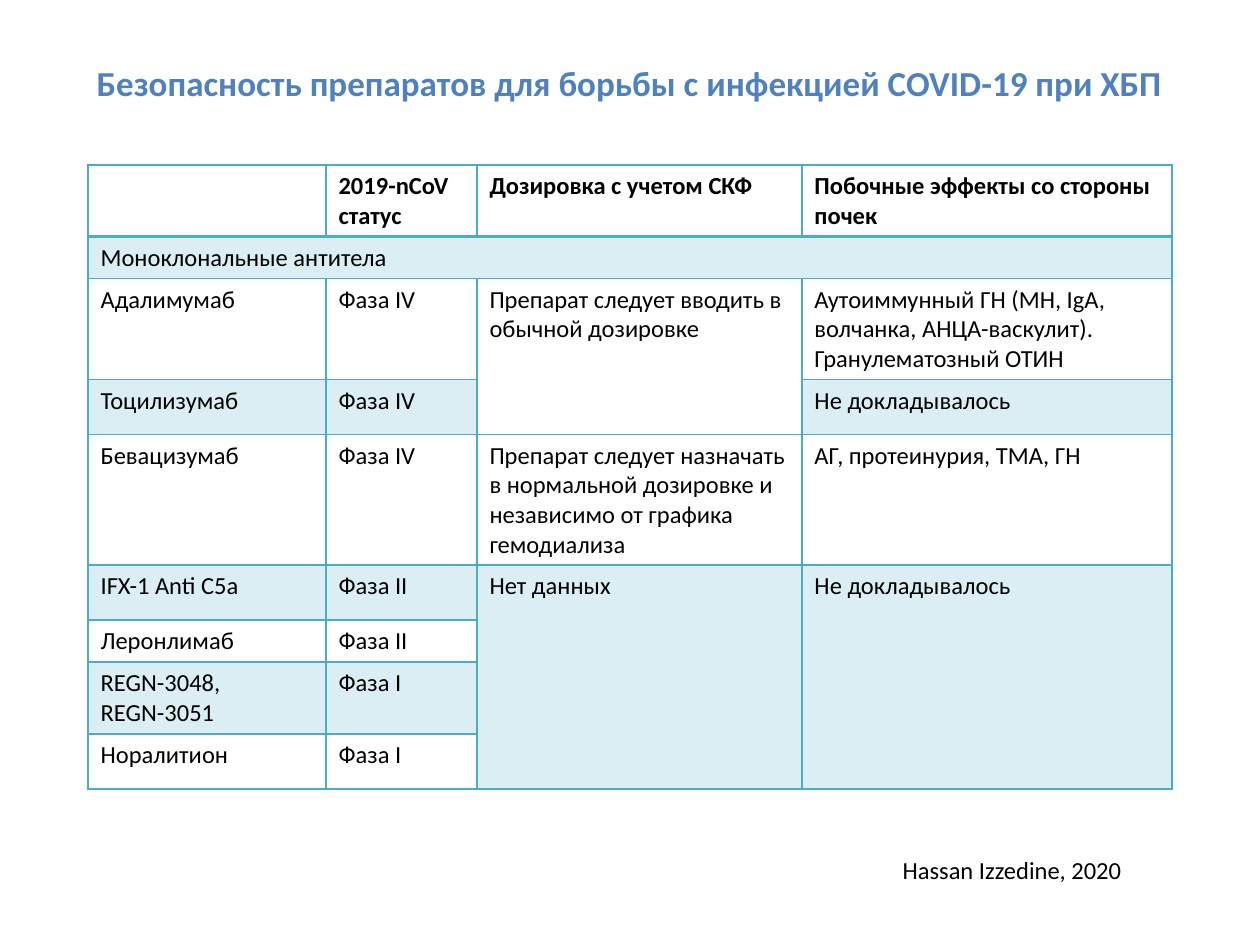
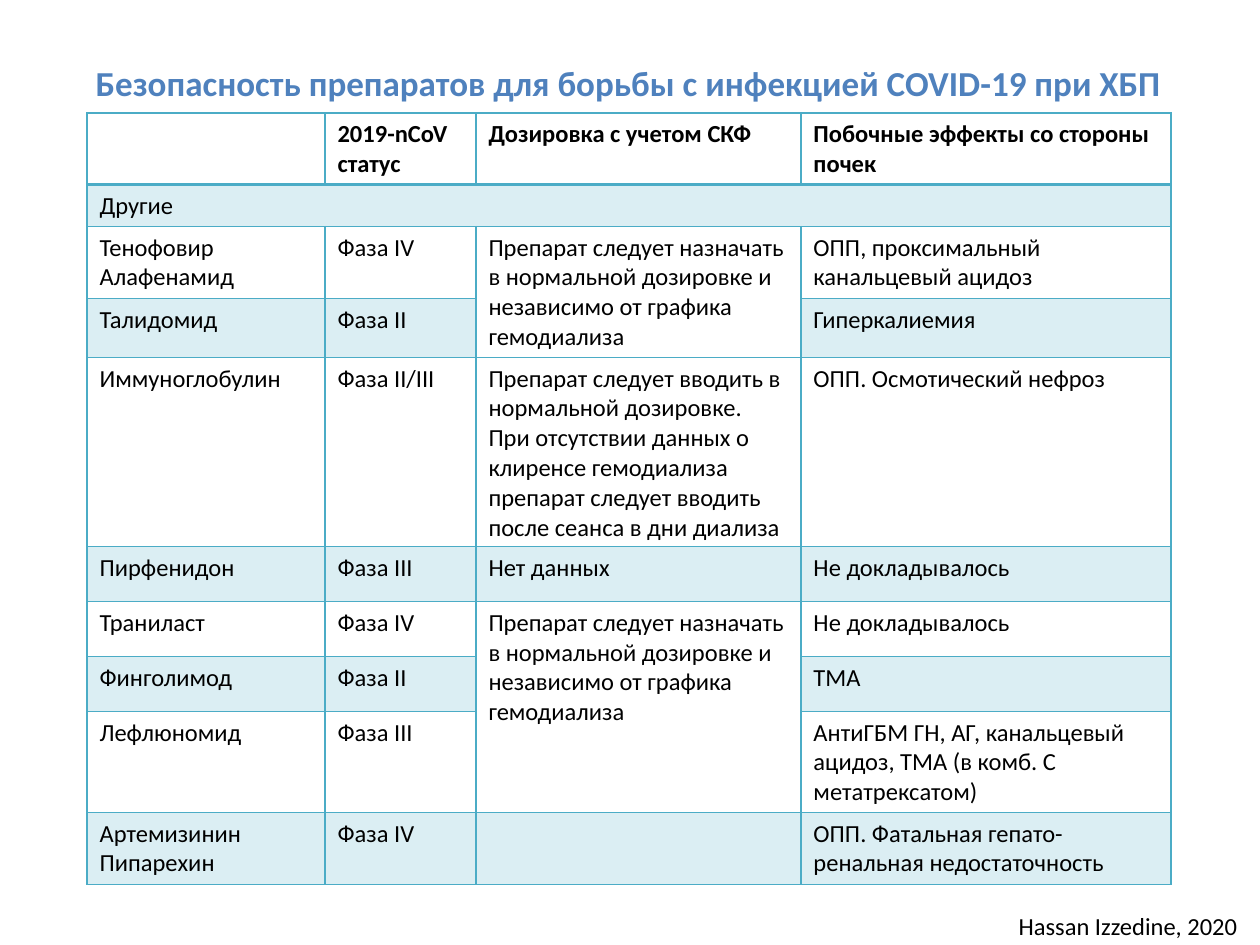
from lxml import etree
from pptx import Presentation
from pptx import util as u
from pptx.dml.color import RGBColor
from pptx.enum import text
from pptx.oxml.ns import qn

PX = 914400 / 126  # EMU in one px
COLORS = {"title": "4F81BD", "body": "000000", "accent": "4BACC6"}
FONT = "Calibri"
TINT_ALPHA = "20000"

TITLE = "Безопасность препаратов для борьбы с инфекцией COVID-19 при ХБП"
AUTHOR = "Hassan Izzedine, 2020"
HEADER = ["", "2019-nCoV статус", "Дозировка с учетом СКФ", "Побочные эффекты со стороны почек"]
COLUMN_WIDTHS = [238, 151, 325, 370]
USUAL_DOSE = "Препарат следует назначать в нормальной дозировке и независимо от графика гемодиализа"
NO_DATA = "Нет данных"
NOT_REPORTED = "Не докладывалось"

# Each drug row: name, status, dosage, side effects; None continues the cell above
PAGES = [
    {
        "title_left": 74, "table": (88, 165), "author": (878, 849),
        "section": "Моноклональные антитела",
        "heights": [71, 42, 101, 55, 130, 55, 42, 72, 55],
        "drugs": [
            ["Адалимумаб", "Фаза IV", "Препарат следует вводить в обычной дозировке",
             "Аутоиммунный ГН (МН, IgA, волчанка, АНЦА-васкулит). Гранулематозный ОТИН"],
            ["Тоцилизумаб", "Фаза IV", None, NOT_REPORTED],
            ["Бевацизумаб", "Фаза IV", USUAL_DOSE, "АГ, протеинурия, ТМА, ГН"],
            ["IFX-1 Anti C5a", "Фаза II", NO_DATA, NOT_REPORTED],
            ["Леронлимаб", "Фаза II", None, None],
            ["REGN-3048, REGN-3051", "Фаза I", None, None],
            ["Норалитион", "Фаза I", None, None],
        ],
    },
    {
        "title_left": 73, "table": (87, 113), "author": (994, 905),
        "section": "Другие",
        "heights": [71, 42, 72, 59, 189, 55, 55, 55, 100, 72],
        "drugs": [
            ["Тенофовир Алафенамид", "Фаза IV", USUAL_DOSE, "ОПП, проксимальный канальцевый ацидоз"],
            ["Талидомид", "Фаза II", None, "Гиперкалиемия"],
            ["Иммуноглобулин", "Фаза II/III",
             "Препарат следует вводить в нормальной дозировке. При отсутствии данных о клиренсе "
             "гемодиализа препарат следует вводить после сеанса в дни диализа",
             "ОПП. Осмотический нефроз"],
            ["Пирфенидон", "Фаза III", NO_DATA, NOT_REPORTED],
            ["Траниласт", "Фаза IV", USUAL_DOSE, NOT_REPORTED],
            ["Финголимод", "Фаза II", None, "ТМА"],
            ["Лефлюномид", "Фаза III", None,
             "АнтиГБМ ГН, АГ, канальцевый ацидоз, ТМА (в комб. С метатрексатом)"],
            ["Артемизинин Пипарехин", "Фаза IV", "", "ОПП. Фатальная гепато-ренальная недостаточность"],
        ],
    },
]


def add_run(paragraph, words, size, color, bold=False):
    run = paragraph.add_run()
    run.text = words
    run.font.name = FONT
    run.font.size = u.Pt(size)
    run.font.bold = bold
    run.font.color.rgb = RGBColor.from_string(COLORS[color])


def add_border(cell, side, points):
    line = etree.SubElement(cell._tc.get_or_add_tcPr(), qn("a:ln" + side), w=str(u.Pt(points)))
    fill = etree.SubElement(line, qn("a:solidFill"))
    etree.SubElement(fill, qn("a:srgbClr"), val=COLORS["accent"])


presentation = Presentation()
presentation.slide_width = round(1260 * PX)
presentation.slide_height = round(945 * PX)

for page in PAGES:
    slide = presentation.slides.add_slide(presentation.slide_layouts[6])

    # Title and author, both centred in their boxes
    author_left, author_top = page["author"]
    for box, words, size, color, bold in [
        ((page["title_left"], 55, 1111, 55), TITLE, 20, "title", True),
        ((author_left, author_top, 268, 43), AUTHOR, 14, "body", False),
    ]:
        shape = slide.shapes.add_textbox(*[round(length * PX) for length in box])
        shape.text_frame.word_wrap = True
        shape.text_frame.auto_size = text.MSO_AUTO_SIZE.SHAPE_TO_FIT_TEXT
        paragraph = shape.text_frame.paragraphs[0]
        paragraph.alignment = text.PP_ALIGN.CENTER
        add_run(paragraph, words, size, color, bold)

    # Table grid
    rows = [HEADER, [page["section"], None, None, None]] + page["drugs"]
    left, top = page["table"]
    frame = slide.shapes.add_table(
        len(rows), len(HEADER), round(left * PX), round(top * PX),
        round(sum(COLUMN_WIDTHS) * PX), round(sum(page["heights"]) * PX))
    table = frame.table
    table.first_row = False
    table.horz_banding = False
    for column, width in zip(table.columns, COLUMN_WIDTHS):
        column.width = round(width * PX)
    for row, height in zip(table.rows, page["heights"]):
        row.height = round(height * PX)

    # Cell text, borders and tinted odd rows
    for row_index, row in enumerate(rows):
        for column_index, words in enumerate(row):
            cell = table.cell(row_index, column_index)
            if words:
                add_run(cell.text_frame.paragraphs[0], words, 14, "body", row_index == 0)
            for side in "LRTB":
                under_header = (row_index, side) in [(0, "B"), (1, "T")]
                add_border(cell, side, 2 if under_header else 1)
            if row_index % 2:
                cell.fill.solid()
                cell.fill.fore_color.rgb = RGBColor.from_string(COLORS["accent"])
                tint = cell._tc.tcPr.find(qn("a:solidFill"))[0]
                etree.SubElement(tint, qn("a:alpha"), val=TINT_ALPHA)
            else:
                cell.fill.background()

    # Section row spans the table; None cells join the cell above
    table.cell(1, 0).merge(table.cell(1, len(HEADER) - 1))
    for column_index in range(len(HEADER)):
        start = 2
        for row_index in range(3, len(rows) + 1):
            if row_index == len(rows) or rows[row_index][column_index] is not None:
                if row_index - start > 1:
                    table.cell(start, column_index).merge(table.cell(row_index - 1, column_index))
                start = row_index

presentation.save("out.pptx")
